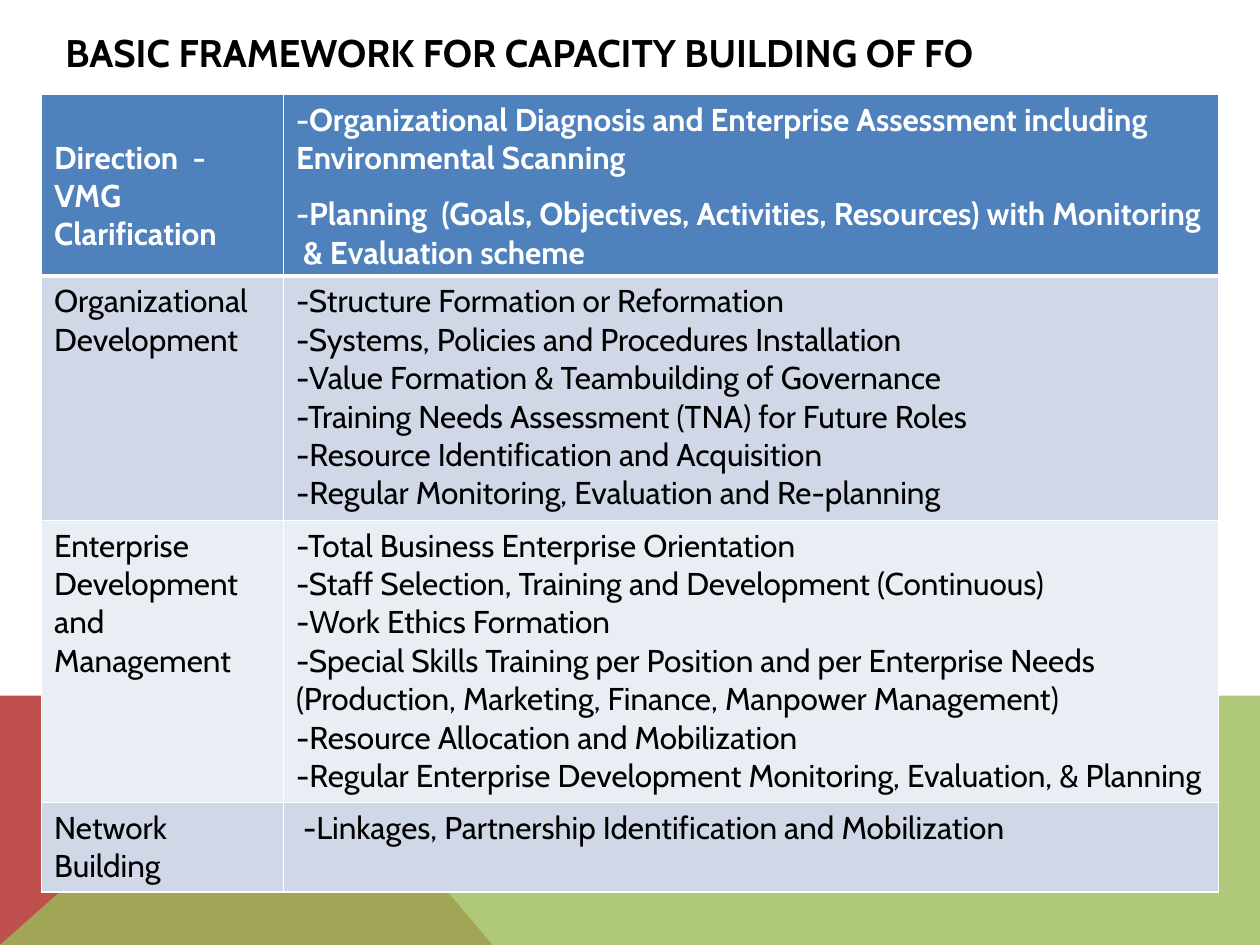
from lxml.etree import SubElement
from pptx import Presentation
from pptx.dml.color import RGBColor
from pptx.enum.text import MSO_ANCHOR
from pptx.oxml.ns import qn
from pptx.util import Inches, Pt

FONT = "Cabin"
BLACK = RGBColor(0x00, 0x00, 0x00)
WHITE = RGBColor(0xFF, 0xFF, 0xFF)
RED = RGBColor(0xC0, 0x50, 0x4D)
GREEN = RGBColor(0x9B, 0xBB, 0x59)
HEADER_BLUE = RGBColor(0x4F, 0x81, 0xBD)
BAND_DARK = RGBColor(0xD0, 0xD8, 0xE8)
BAND_LIGHT = RGBColor(0xE9, 0xED, 0xF4)

COLUMN_WIDTHS = (1.92, 7.42)
ROW_HEIGHTS = (1.44, 1.94, 2.24, 0.71)
FRAMEWORK = (
    ("Direction  - VMG Clarification", (
        "-Organizational Diagnosis and Enterprise Assessment including Environmental Scanning",
        "-Planning  (Goals, Objectives, Activities, Resources) with Monitoring  & Evaluation scheme",
    )),
    ("Organizational Development", (
        "-Structure Formation or Reformation",
        "-Systems, Policies and Procedures Installation",
        "-Value Formation & Teambuilding of Governance",
        "-Training Needs Assessment (TNA) for Future Roles",
        "-Resource Identification and Acquisition",
        "-Regular Monitoring, Evaluation and Re-planning",
    )),
    ("Enterprise Development and Management", (
        "-Total Business Enterprise Orientation",
        "-Staff Selection, Training and Development (Continuous)",
        "-Work Ethics Formation",
        "-Special Skills Training per Position and per Enterprise Needs "
        "(Production, Marketing, Finance, Manpower Management)",
        "-Resource Allocation and Mobilization",
        "-Regular Enterprise Development Monitoring, Evaluation, & Planning",
    )),
    ("Network Building", (
        " -Linkages, Partnership Identification and Mobilization",
    )),
)


def format_text(text_frame, size, color, bold):
    for paragraph in text_frame.paragraphs:
        for run in paragraph.runs:
            run.font.name = FONT
            run.font.size = Pt(size)
            run.font.bold = bold
            run.font.color.rgb = color


def add_polygon(slide, points, color, opacity=100):
    """Draw a borderless polygon; opacity is in percent."""
    corners = [(Inches(x), Inches(y)) for x, y in points]
    builder = slide.shapes.build_freeform(*corners[0])
    builder.add_line_segments(corners[1:], close=True)
    shape = builder.convert_to_shape()
    shape.shadow.inherit = False
    shape.line.fill.background()
    shape.fill.solid()
    shape.fill.fore_color.rgb = color
    if opacity < 100:
        color_element = shape._element.spPr.find(".//" + qn("a:srgbClr"))
        SubElement(color_element, qn("a:alpha"), val=str(opacity * 1000))


def add_footer_bands(slide, left, top, width, height):
    right, bottom = left + width, top + height
    peak = left + 2.23
    add_polygon(slide, [(left, bottom), (left, top), (peak, top), (left + 3.91, bottom)], RED)
    add_polygon(slide, [(left, bottom), (peak, top), (right, top), (right, bottom)], GREEN, 80)


def add_title(slide, left, top, width, height):
    box = slide.shapes.add_textbox(Inches(left), Inches(top), Inches(width), Inches(height))
    text_frame = box.text_frame
    text_frame.word_wrap = True
    text_frame.vertical_anchor = MSO_ANCHOR.MIDDLE
    text_frame.text = "BASIC FRAMEWORK FOR CAPACITY BUILDING OF FO"
    format_text(text_frame, 22, BLACK, True)


def set_borders(cell, top, bottom):
    """Give the cell white borders; top and bottom are widths in points."""
    properties = cell._tc.get_or_add_tcPr()
    for side, width in (("L", 1), ("R", 1), ("T", top), ("B", bottom)):
        line = SubElement(properties, qn(f"a:ln{side}"), w=str(Pt(width)))
        fill = SubElement(line, qn("a:solidFill"))
        SubElement(fill, qn("a:srgbClr"), val=str(WHITE))


def fill_cell(cell, row, text):
    is_header = row == 0
    cell.text_frame.text = text
    format_text(cell.text_frame, 18, WHITE if is_header else BLACK, is_header)
    set_borders(cell, 3 if row == 1 else 1, 3 if is_header else 1)
    cell.fill.solid()
    if is_header:
        cell.fill.fore_color.rgb = HEADER_BLUE
    else:
        cell.fill.fore_color.rgb = BAND_DARK if row % 2 else BAND_LIGHT


def add_framework_table(slide, left, top, width, height):
    frame = slide.shapes.add_table(
        len(FRAMEWORK), len(COLUMN_WIDTHS),
        Inches(left), Inches(top), Inches(width), Inches(height))
    table = frame.table
    for column, column_width in zip(table.columns, COLUMN_WIDTHS):
        column.width = Inches(column_width)
    for row, row_height in zip(table.rows, ROW_HEIGHTS):
        row.height = Inches(row_height)
    for row, (area, activities) in enumerate(FRAMEWORK):
        fill_cell(table.cell(row, 0), row, area)
        fill_cell(table.cell(row, 1), row, "\n".join(activities))
    table.cell(0, 0).margin_top = Inches(0.35)
    table.cell(0, 1).text_frame.paragraphs[1].space_before = Pt(10)


def main():
    presentation = Presentation()
    presentation.slide_width = Inches(10)
    presentation.slide_height = Inches(7.5)
    slide = presentation.slides.add_slide(presentation.slide_layouts[6])
    add_footer_bands(slide, 0, 5.52, 10, 1.98)
    add_title(slide, 0.42, 0.25, 8.38, 0.33)
    add_framework_table(slide, 0.33, 0.75, sum(COLUMN_WIDTHS), sum(ROW_HEIGHTS))
    presentation.save("out.pptx")


if __name__ == "__main__":
    main()
